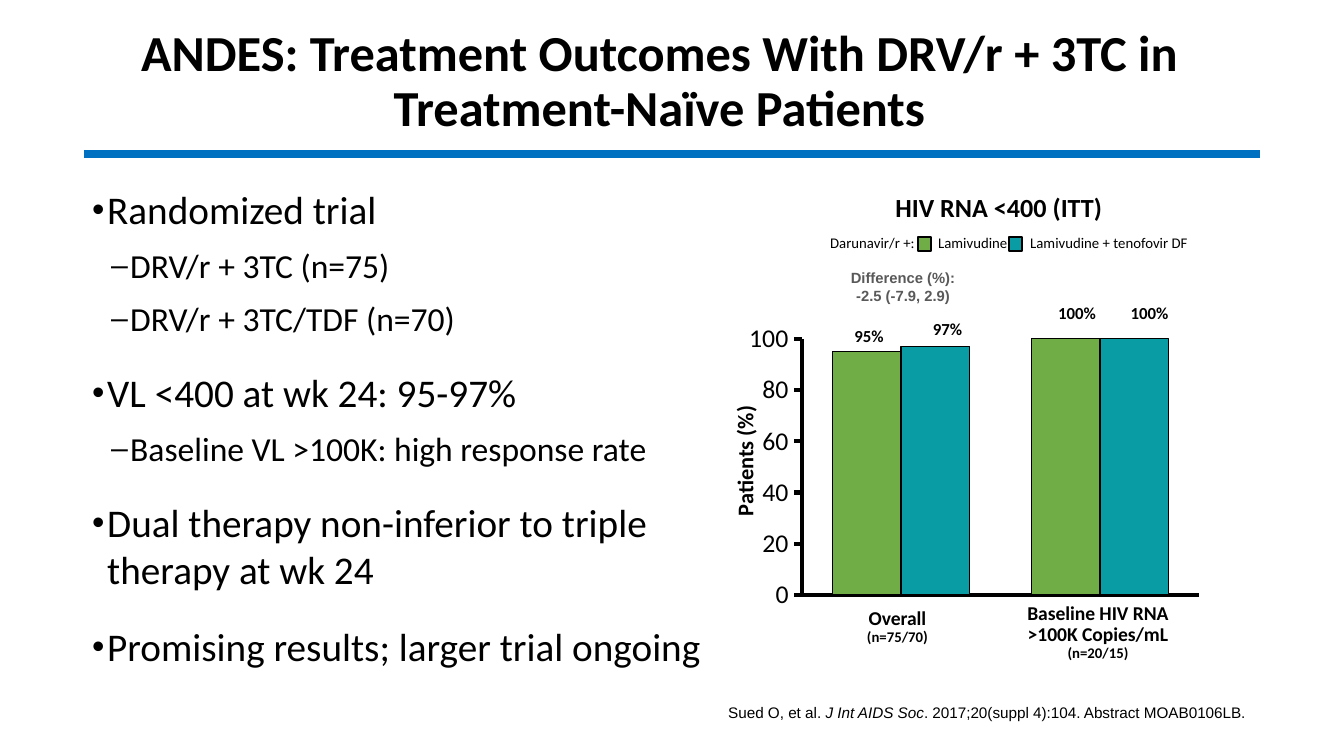
"""Build the ANDES trial outcomes slide."""
from lxml import etree
from pptx import Presentation
from pptx import util as u
from pptx.chart.data import CategoryChartData
from pptx.dml.color import RGBColor
from pptx.enum import chart as ch
from pptx.enum import shapes, text
from pptx.oxml import parse_xml
from pptx.oxml.ns import nsdecls, qn

SCALE = 9144000 / 1344
COLORS = {"ink": "000000", "note": "595959", "rule": "0070C0",
          "dual": "70AD47", "triple": "0A9CA5"}
CENTER, LEFT, RIGHT = (text.PP_ALIGN.CENTER, text.PP_ALIGN.LEFT,
                       text.PP_ALIGN.RIGHT)
OUTLINE = [
    (0, "Randomized trial", 6.8),
    (1, "DRV/r + 3TC (n=75)", 6.8),
    (1, "DRV/r + 3TC/TDF (n=70)", 6.8),
    (0, "VL <400 at wk 24: 95-97%", 16),
    (1, "Baseline VL >100K: high response rate", 6.8),
    (0, "Dual therapy non-inferior to triple therapy at wk 24", 16),
    (0, "Promising results; larger trial ongoing", 16),
]
LEVELS = [("•", 21, 15, -15), ("–", 18, 38, -19)]
BAR_LABELS = [("95%", 841, 321, 56), ("97%", 911, 314, 73),
              ("100%", 1038, 298, 78), ("100%", 1102, 298, 95)]
LEGEND = [("Darunavir/r +:", 817), ("Lamivudine", 925),
          ("Lamivudine + tenofovir DF", 1017)]
KEYS = [("dual", 918), ("triple", 1009)]


def px(length):
    """Turn px into EMU."""
    return u.Emu(round(length * SCALE))


def rgb(name):
    """Look up a named colour."""
    return RGBColor.from_string(COLORS[name])


def style_font(font, size, face="Calibri", color="ink", bold=False):
    """Set the main properties of a font."""
    font.size, font.name, font.bold = u.Pt(size), face, bold
    font.color.rgb = rgb(color)


def add_frame(slide, box, wrap=True):
    """Add an empty text box and return its shape."""
    holder = slide.shapes.add_textbox(*map(px, box))
    holder.text_frame.word_wrap = wrap
    return holder


def add_label(slide, box, lines, align=CENTER, spacing=0.9, wrap=True,
              face="Calibri", color="ink", bold=True):
    """Add lines of (text, size, italic) runs and return the shape."""
    label = add_frame(slide, box, wrap)
    for index, runs in enumerate(lines):
        frame = label.text_frame
        line = frame.add_paragraph() if index else frame.paragraphs[0]
        line.alignment, line.line_spacing = align, spacing
        for words, size, *italic in runs:
            run = line.add_run()
            run.text = words
            style_font(run.font, size, face, color, bold)
            run.font.italic = bool(italic)
    return label


def add_outline(slide, box):
    """Add the two-level bulleted list."""
    frame = add_frame(slide, box).text_frame
    for index, (level, words, gap) in enumerate(OUTLINE):
        mark, size, margin, indent = LEVELS[level]
        item = frame.add_paragraph() if index else frame.paragraphs[0]
        item.level, item.space_before = level, u.Pt(gap)
        run = item.add_run()
        run.text = words
        style_font(run.font, size)
        props = item._p.get_or_add_pPr()
        props.set("marL", str(px(margin)))
        props.set("indent", str(px(indent)))
        etree.SubElement(props, qn("a:buSzPct")).set("val", "90000")
        etree.SubElement(props, qn("a:buFont")).set("typeface", "Arial")
        etree.SubElement(props, qn("a:buChar")).set("char", mark)


def add_key(slide, color, left):
    """Add one legend square."""
    key = slide.shapes.add_shape(shapes.MSO_SHAPE.RECTANGLE,
                                 *map(px, (left, 237, 13, 14)))
    key.shadow.inherit = False
    key.fill.solid()
    key.fill.fore_color.rgb = rgb(color)
    key.line.color.rgb = rgb("ink")
    key.line.width = u.Pt(0.75)


def add_rule(slide, left, right, top):
    """Add the line under the title."""
    rule = slide.shapes.add_connector(shapes.MSO_CONNECTOR.STRAIGHT,
                                      *map(px, (left, top, right, top)))
    rule.line.color.rgb = rgb("rule")
    rule.line.width = u.Pt(4.5)
    etree.SubElement(rule._element.spPr, qn("a:effectLst"))


def set_plot_area(chart, x, y, w, h):
    """Fix the inner plot area as fractions of the chart."""
    area = chart._chartSpace.chart.plotArea
    for old in area.findall(qn("c:layout")):
        area.remove(old)
    area.insert(0, parse_xml(
        f'<c:layout {nsdecls("c")}><c:manualLayout>'
        '<c:layoutTarget val="inner"/><c:xMode val="edge"/>'
        f'<c:yMode val="edge"/><c:x val="{x}"/><c:y val="{y}"/>'
        f'<c:w val="{w}"/><c:h val="{h}"/></c:manualLayout></c:layout>'))


def add_response_chart(slide, box):
    """Add the clustered columns of response rates."""
    rates = CategoryChartData()
    rates.categories = ["1", "2"]
    rates.add_series("Series 1", (95, 100))
    rates.add_series("Series 2", (97, 100))
    chart = slide.shapes.add_chart(ch.XL_CHART_TYPE.COLUMN_CLUSTERED,
                                   *map(px, box), rates).chart
    chart.has_legend = chart.has_title = False
    style_font(chart.font, 14)
    columns = chart.plots[0]
    columns.gap_width, columns.overlap = 90, 0
    columns.vary_by_categories = False
    for series, color in zip(columns.series, ("dual", "triple")):
        series.format.fill.solid()
        series.format.fill.fore_color.rgb = rgb(color)
        series.format.line.color.rgb = rgb("ink")
        series.format.line.width = u.Pt(0.75)
    groups, percent = chart.category_axis, chart.value_axis
    for axis in (groups, percent):
        axis.has_major_gridlines = False
        axis.minor_tick_mark = ch.XL_TICK_MARK.NONE
        axis.format.line.color.rgb = rgb("ink")
        axis.format.line.width = u.Pt(2.25)
    groups.major_tick_mark = ch.XL_TICK_MARK.NONE
    groups.tick_label_position = ch.XL_TICK_LABEL_POSITION.NONE
    percent.major_tick_mark = ch.XL_TICK_MARK.OUTSIDE
    percent.minimum_scale, percent.maximum_scale = 0, 100
    percent.major_unit = 20
    style_font(percent.tick_labels.font, 14)
    set_plot_area(chart, 0.1, 0.05, 0.87, 0.91)


def main():
    """Build and save the slide."""
    deck = Presentation()
    deck.slide_width, deck.slide_height = px(1344), px(756)
    slide = deck.slides.add_slide(deck.slide_layouts[6])

    title = add_label(slide, (60, 51, 1199, 93), [[(
        "ANDES: Treatment Outcomes With DRV/r + 3TC in "
        "Treatment-Naïve Patients", 27)]])
    title.text_frame.vertical_anchor = text.MSO_ANCHOR.BOTTOM
    add_rule(slide, 84, 1260, 154)
    add_outline(slide, (79, 179, 637, 400))
    add_label(slide, (603, 699, 656, 31), [[
        ("Sued O, et al. ", 8.2), ("J Int AIDS Soc", 8.2, True),
        (". 2017;20(suppl 4):104. Abstract MOAB0106LB.", 8.2)]],
        align=RIGHT, face="Arial", bold=False)

    add_label(slide, (798, 188, 402, 42), [[("HIV RNA <400 (ITT)", 14)]])
    for words, left in LEGEND:
        add_label(slide, (left, 227, 200, 31), [[(words, 7.9)]],
                  align=LEFT, spacing=1.0, bold=False)
    for color, left in KEYS:
        add_key(slide, color, left)
    axis_title = add_label(slide, (606, 442, 281, 38),
                           [[("Patients (%)", 12)]])
    axis_title.rotation = 270
    add_response_chart(slide, (749, 323, 464, 288))
    for words, left, top, width in BAR_LABELS:
        add_label(slide, (left, top, width, 32), [[(words, 9)]])
    add_label(slide, (853, 602, 89, 51),
              [[("Overall", 10.5)], [("(n=75/70", 7.9), (")", 8.2)]],
              wrap=False)
    add_label(slide, (996, 597, 204, 73),
              [[("Baseline HIV RNA", 10.5)], [(">100K Copies/mL", 10.5)],
               [("(n=20/15)", 7.9)]])
    difference = add_label(
        slide, (825, 265, 156, 43),
        [[("Difference (%):", 7.9)], [("-2.5 (-7.9, 2.9)", 7.9)]],
        spacing=1.0, face="Arial", color="note").text_frame
    difference.margin_left = difference.margin_right = px(8)
    difference.margin_top = difference.margin_bottom = px(4)
    deck.save("out.pptx")


if __name__ == "__main__":
    main()
